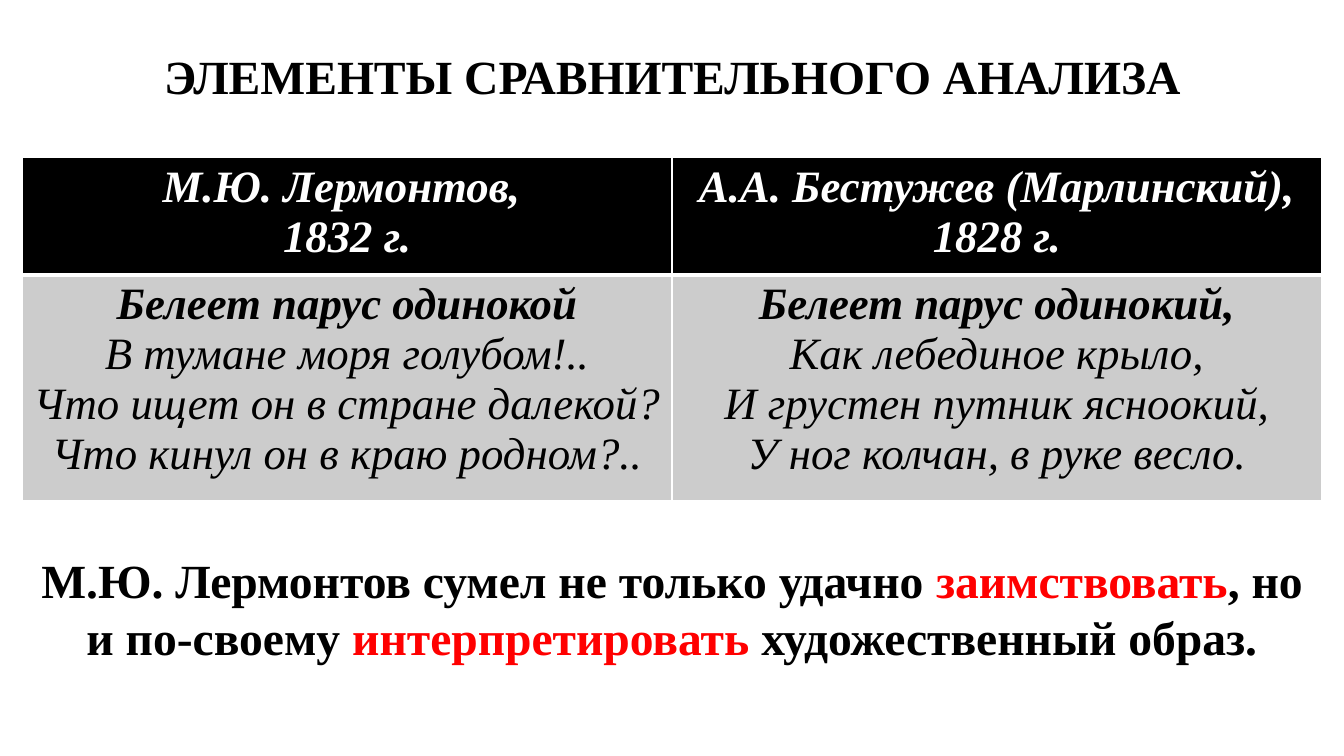
from lxml.etree import SubElement
from pptx import Presentation
from pptx.dml.color import RGBColor
from pptx.enum.text import MSO_ANCHOR as Anchor, MSO_AUTO_SIZE as AutoSize, PP_ALIGN as Align
from pptx.oxml.ns import qn
from pptx.util import Inches, Pt

BLACK = RGBColor(0x00, 0x00, 0x00)
WHITE = RGBColor(0xFF, 0xFF, 0xFF)
GREY = RGBColor(0xCC, 0xCC, 0xCC)
RED = RGBColor(0xFF, 0x00, 0x00)

HEADING = {"name": "Times New Roman", "size": Pt(34), "bold": True, "italic": False}
POET = {"name": "Times New Roman", "size": Pt(32), "bold": True, "italic": True}
VERSE = POET | {"bold": False}

# Each cell is a list of paragraphs, each paragraph a list of (text, format) runs.
POETS = [
    [[("М.Ю. Лермонтов, ", POET)], [("1832 г.", POET)]],
    [[("А.А. Бестужев (Марлинский), 1828 г.", POET)]],
]
POEMS = [
    [[("Белеет парус одинокой\n", POET),
      ("В тумане моря голубом!..\nЧто ищет он в стране далекой?\n"
       "Что кинул он в краю родном?..", VERSE)]],
    [[("Белеет парус одинокий,", POET)],
     [("Как лебединое крыло,", VERSE)],
     [("И грустен путник ясноокий,", VERSE)],
     [("У ног колчан, в руке весло.", VERSE)]],
]
CONCLUSION = [
    ("М.Ю. Лермонтов сумел не только удачно ", BLACK),
    ("заимствовать", RED),
    (", но и по-своему ", BLACK),
    ("интерпретировать", RED),
    (" художественный образ.", BLACK),
]


def add_run(paragraph, text, font_format, color):
    """Add text to the paragraph, turning each newline into a line break."""
    for number, line in enumerate(text.split("\n")):
        if number:
            paragraph.add_line_break()
        if line:
            run = paragraph.add_run()
            run.text = line
            for key, value in font_format.items():
                setattr(run.font, key, value)
            run.font.color.rgb = color


def fill_text(frame, paragraphs, color):
    for number, runs in enumerate(paragraphs):
        paragraph = frame.add_paragraph() if number else frame.paragraphs[0]
        paragraph.alignment = Align.CENTER
        for text, font_format in runs:
            add_run(paragraph, text, font_format, color)


def set_borders(cell, widths):
    """Draw white borders; widths maps side letters to points."""
    properties = cell._tc.get_or_add_tcPr()
    for side, width in widths.items():
        line = SubElement(properties, qn(f"a:ln{side}"), w=str(Pt(width)))
        fill = SubElement(line, qn("a:solidFill"))
        SubElement(fill, qn("a:srgbClr"), val=str(WHITE))


def add_title(slide, left, top, width, height):
    title = slide.shapes.title
    title.left, title.top, title.width, title.height = left, top, width, height
    frame = title.text_frame
    frame.word_wrap = False
    frame.auto_size = AutoSize.SHAPE_TO_FIT_TEXT
    frame.vertical_anchor = Anchor.TOP
    fill_text(frame, [[("ЭЛЕМЕНТЫ СРАВНИТЕЛЬНОГО АНАЛИЗА", HEADING)]], BLACK)


def add_comparison(slide, left, top, width, row_heights):
    rows = [
        (POETS, WHITE, BLACK, {"L": 1, "R": 1, "T": 1, "B": 3}),
        (POEMS, BLACK, GREY, {"L": 1, "R": 1, "T": 3, "B": 1}),
    ]
    table = slide.shapes.add_table(
        len(rows), len(POETS), left, top, width, sum(row_heights)).table
    for row, height in zip(table.rows, row_heights):
        row.height = height
    for row, (contents, text_color, background, borders) in zip(table.rows, rows):
        for cell, paragraphs in zip(row.cells, contents):
            set_borders(cell, borders)
            cell.fill.solid()
            cell.fill.fore_color.rgb = background
            fill_text(cell.text_frame, paragraphs, text_color)


def add_conclusion(slide, left, top, width, height):
    frame = slide.shapes.add_textbox(left, top, width, height).text_frame
    frame.word_wrap = True
    frame.auto_size = AutoSize.SHAPE_TO_FIT_TEXT
    paragraph = frame.paragraphs[0]
    paragraph.alignment = Align.CENTER
    for text, color in CONCLUSION:
        add_run(paragraph, text, HEADING, color)


def main():
    deck = Presentation()
    deck.slide_width, deck.slide_height = Inches(13.33), Inches(7.5)
    slide = deck.slides.add_slide(deck.slide_layouts.get_by_name("Title Only"))
    left, width = Inches(0.22), Inches(12.89)
    add_title(slide, Inches(1.47), Inches(0.42), Inches(10.4), Inches(0.67))
    add_comparison(slide, left, Inches(1.56), width, [Inches(1.15), Inches(2.2)])
    add_conclusion(slide, left, Inches(5.42), width, Inches(1.25))
    deck.save("out.pptx")


if __name__ == "__main__":
    main()
